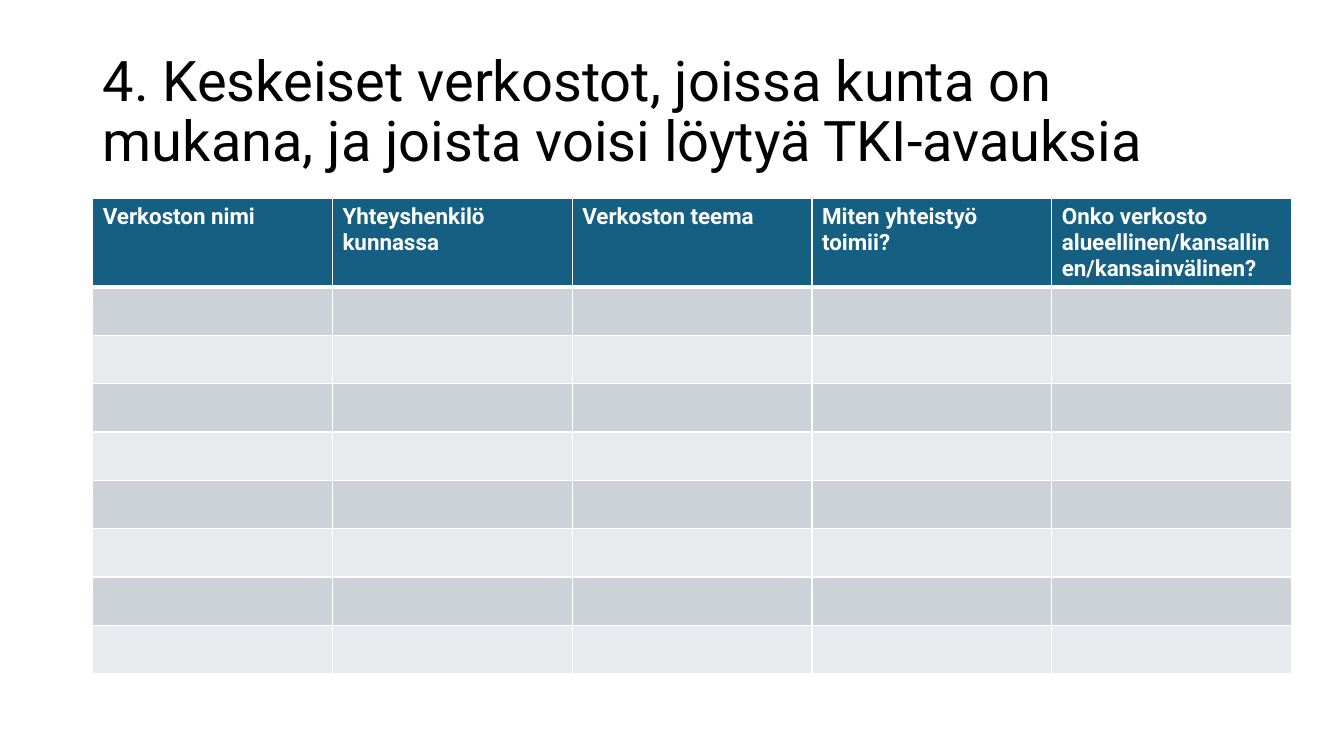
from lxml import etree
from pptx import Presentation
from pptx import util as u
from pptx.dml.color import RGBColor
from pptx.enum import text
from pptx.oxml import ns

COLORS = {
    "title": "000000",
    "header": "156082",
    "header_text": "FFFFFF",
    "dark_band": "CCD2D8",
    "light_band": "E8EAED",
    "border": "FFFFFF",
}
FONT = "Roboto"
TITLE = "4. Keskeiset verkostot, joissa kunta on mukana, ja joista voisi löytyä TKI-avauksia"
HEADERS = [
    "Verkoston nimi",
    "Yhteyshenkilö kunnassa",
    "Verkoston teema",
    "Miten yhteistyö toimii?",
    "Onko verkosto alueellinen/kansallinen/kansainvälinen?",
]
EMPTY_ROWS = 8
HEADER_HEIGHT = 0.87
ROW_HEIGHT = 0.48


def write_text(frame, content, size, color, bold=False, line_spacing=None):
    paragraph = frame.paragraphs[0]
    paragraph.line_spacing = line_spacing
    run = paragraph.add_run()
    run.text = content
    run.font.name = FONT
    run.font.size = u.Pt(size)
    run.font.bold = bold
    run.font.color.rgb = RGBColor.from_string(COLORS[color])


def set_borders(cell, **widths):
    """Draw the cell's four edges, with widths in points."""
    properties = cell._tc.get_or_add_tcPr()
    for side in ("left", "right", "top", "bottom"):
        line = etree.SubElement(properties, ns.qn("a:ln" + side[0].upper()),
                                w=str(u.Pt(widths.get(side, 1))))
        fill = etree.SubElement(line, ns.qn("a:solidFill"))
        etree.SubElement(fill, ns.qn("a:srgbClr"), val=COLORS["border"])


def set_fill(cell, color):
    cell.fill.solid()
    cell.fill.fore_color.rgb = RGBColor.from_string(COLORS[color])


def add_title(slide, left, top, width, height):
    title = slide.shapes.title
    title.left, title.top = u.Inches(left), u.Inches(top)
    title.width, title.height = u.Inches(width), u.Inches(height)
    frame = title.text_frame
    frame.word_wrap = True
    frame.auto_size = text.MSO_AUTO_SIZE.NONE
    frame.vertical_anchor = text.MSO_ANCHOR.MIDDLE
    write_text(frame, TITLE, size=40, color="title", line_spacing=0.9)
    frame.paragraphs[0].alignment = text.PP_ALIGN.LEFT


def add_network_table(slide, left, top, width):
    height = HEADER_HEIGHT + EMPTY_ROWS * ROW_HEIGHT
    table = slide.shapes.add_table(
        EMPTY_ROWS + 1, len(HEADERS), u.Inches(left), u.Inches(top),
        u.Inches(width), u.Inches(height)).table
    for column in table.columns:
        column.width = u.Inches(width / len(HEADERS))
    for index, row in enumerate(table.rows):
        row.height = u.Inches(ROW_HEIGHT if index else HEADER_HEIGHT)

    # Header row, with a thick line below it
    for column, header in enumerate(HEADERS):
        cell = table.cell(0, column)
        set_borders(cell, bottom=3)
        set_fill(cell, "header")
        write_text(cell.text_frame, header, size=16, color="header_text", bold=True)

    # Empty rows in alternating bands
    for row in range(1, EMPTY_ROWS + 1):
        for column in range(len(HEADERS)):
            cell = table.cell(row, column)
            set_borders(cell, top=3 if row == 1 else 1)
            set_fill(cell, "dark_band" if row % 2 else "light_band")


def main():
    presentation = Presentation()
    presentation.slide_width = u.Inches(13.33)
    presentation.slide_height = u.Inches(7.5)
    slide = presentation.slides.add_slide(presentation.slide_layouts[5])
    add_title(slide, 0.92, 0.4, 11.5, 1.45)
    add_network_table(slide, 0.92, 1.97, 11.89)
    presentation.save("out.pptx")


if __name__ == "__main__":
    main()
